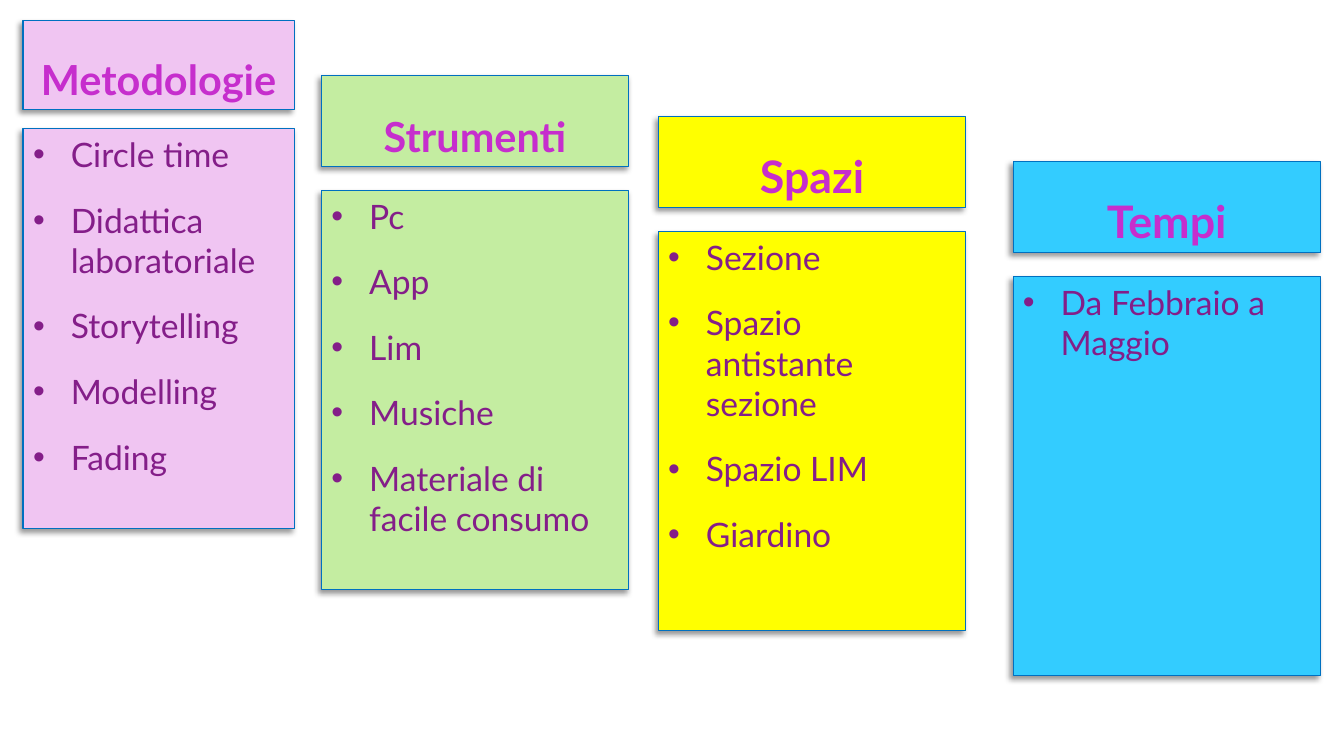
from lxml.etree import SubElement
from pptx import Presentation
from pptx.dml.color import RGBColor
from pptx.enum.shapes import MSO_SHAPE as SHAPE
from pptx.enum.text import MSO_ANCHOR as ANCHOR, MSO_AUTO_SIZE as AUTO, PP_ALIGN as ALIGN
from pptx.oxml.ns import qn
from pptx.util import Cm, Pt

COLORS = {
    "pink": "F0C5F2", "green": "C4EDA1", "yellow": "FFFF00", "blue": "33CCFF",
    "line": "0070C0", "heading": "C62ECD", "text": "841E89", "shadow": "000000",
}
LIST_HEIGHT = 10.06
COLUMNS = [
    ("Metodologie", 29.6, "pink", (0.58, 0.51, 6.84, 2.24), 2.74,
     ["Circle time", "Didattica laboratoriale", "Storytelling", "Modelling", "Fading"]),
    ("Strumenti", 29.6, "green", (8.1, 1.9, 7.75, 2.29), 2.9,
     ["Pc", "App", "Lim", "Musiche", "Materiale di facile consumo"]),
    ("Spazi", 32, "yellow", (16.59, 2.94, 7.75, 2.29), 2.9,
     ["Sezione", "Spazio antistante sezione", "Spazio LIM", "Giardino"]),
    ("Tempi", 32, "blue", (25.53, 4.07, 7.75, 2.29), 2.9,
     ["Da Febbraio a Maggio"]),
]


class Board:
    """Style and current slide of the four-column board."""

    font = "Lato"

    def __init__(self, prs):
        """Add a comparison slide and queue its body placeholders."""
        self.s = prs.slides.add_slide(prs.slide_layouts[4])
        title = self.s.shapes.title
        title.element.getparent().remove(title.element)
        self.free = [sp for sp in self.s.placeholders if sp.placeholder_format.idx in range(1, 5)]

    def color(self, name):
        """Return the named colour."""
        return RGBColor.from_string(COLORS[name])

    def shadow(self, sp):
        """Give a shape a soft shadow towards the lower left."""
        sp.shadow.inherit = False
        effects = sp.element.spPr.find(qn("a:effectLst"))
        outer = SubElement(effects, qn("a:outerShdw"), blurRad=str(Pt(4)), dist=str(Pt(3)),
                           dir="8100000", algn="tr", rotWithShape="0")
        rgb = SubElement(outer, qn("a:srgbClr"), val=COLORS["shadow"])
        SubElement(rgb, qn("a:alpha"), val="40000")

    def box(self, box, fill, anchor):
        """Place a filled box, in a placeholder while any is free."""
        left, top, width, height = map(Cm, box)
        if self.free:
            sp = self.free.pop(0)
            sp.left, sp.top, sp.width, sp.height = left, top, width, height
        else:
            sp = self.s.shapes.add_shape(SHAPE.RECTANGLE, left, top, width, height)
        sp.fill.solid()
        sp.fill.fore_color.rgb = self.color(fill)
        sp.line.color.rgb = self.color("line")
        sp.line.width = Pt(0.75)
        self.shadow(sp)
        tf = sp.text_frame
        tf.word_wrap = True
        tf.auto_size = AUTO.NONE
        tf.vertical_anchor = anchor
        return tf

    def run(self, p, text, size, color, bold=False):
        """Add one styled run to a paragraph."""
        r = p.add_run()
        r.text = text
        r.font.name = self.font
        r.font.size = Pt(size)
        r.font.bold = bold
        r.font.color.rgb = self.color(color)

    def heading(self, text, size, box, fill):
        """Add a centred heading box."""
        p = self.box(box, fill, ANCHOR.BOTTOM).paragraphs[0]
        p.alignment = ALIGN.CENTER
        p.space_before = Pt(0)
        self.run(p, text, size, "heading", True)

    def bullets(self, items, box, fill):
        """Add a bulleted list box."""
        tf = self.box(box, fill, ANCHOR.TOP)
        for i, item in enumerate(items):
            p = tf.add_paragraph() if i else tf.paragraphs[0]
            pPr = p._p.get_or_add_pPr()
            pPr.set("marL", str(Cm(0.95)))
            pPr.set("indent", str(-Cm(0.95)))
            SubElement(pPr, qn("a:buFont"), typeface="Arial")
            SubElement(pPr, qn("a:buChar"), char="•")
            p.alignment = ALIGN.LEFT
            p.space_before = Pt(18 if i else 0)
            self.run(p, item, 24, "text")


def main():
    """Build and save the slide."""
    prs = Presentation()
    prs.slide_width, prs.slide_height = Cm(33.87), Cm(19.05)
    board = Board(prs)
    for name, size, fill, box, drop, items in COLUMNS:
        left, top, width, _ = box
        board.heading(name, size, box, fill)
        board.bullets(items, (left, top + drop, width, LIST_HEIGHT), fill)
    prs.save("out.pptx")


if __name__ == "__main__":
    main()
